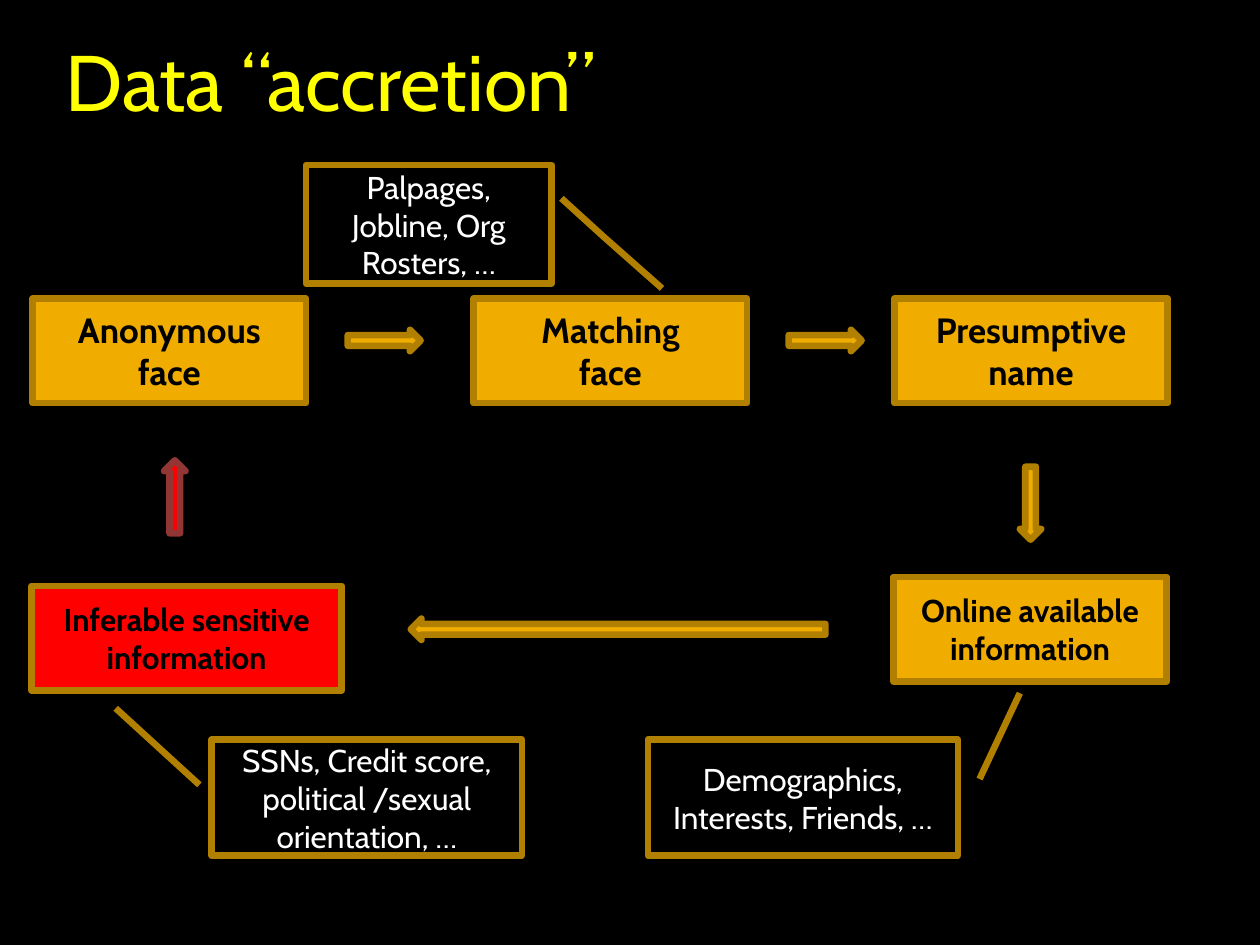
from pptx import Presentation
from pptx.dml.color import RGBColor
from pptx.enum.shapes import MSO_SHAPE
from pptx.enum.text import MSO_ANCHOR, PP_ALIGN
from pptx.util import Cm, Pt

RECT, ARROW = MSO_SHAPE.RECTANGLE, MSO_SHAPE.RIGHT_ARROW
CALL1, CALL2 = MSO_SHAPE.LINE_CALLOUT_1, MSO_SHAPE.LINE_CALLOUT_2
MIDDLE, CENTER = MSO_ANCHOR.MIDDLE, PP_ALIGN.CENTER

FONT = "Cabin"
GOLD, BROWN, RED, MAROON = "F0AD00", "B28000", "FF0000", "923535"
BLACK, WHITE, YELLOW = "000000", "FFFFFF", "FFFF00"
BOX_W, WIDE_W, BOX_H = 5.51, 6.25, 2.11
ARROW_W, ARROW_H = 1.47, 0.43
TOP = 6.02

TITLE = "Data “accretion”"

# Steps: text, left, top, width, size, fill
STEPS = [
    ("Anonymous face", 0.66, TOP, BOX_W, 20, GOLD),
    ("Matching\nface", 9.55, TOP, BOX_W, 20, GOLD),
    ("Presumptive name", 18.03, TOP, BOX_W, 20, GOLD),
    ("Online available information", 18.01, 11.63, BOX_W, 18, GOLD),
    ("Inferable sensitive information", 0.64, 11.81, WIDE_W, 18, RED),
]

# Arrows: left, top, length, turn, fill, line
ARROWS = [
    (7.01, 6.65, ARROW_W, 0, GOLD, BROWN),
    (15.9, 6.65, ARROW_W, 0, GOLD, BROWN),
    (20.04, 9.93, ARROW_W, 90, GOLD, BROWN),
    (8.28, 12.47, 8.36, 180, GOLD, BROWN),
    (2.79, 9.8, ARROW_W, 270, RED, MAROON),
]

# Callouts: text, kind, place, leader points as (y, x) shares of the box
NOTES = [
    ("Palpages, Jobline, Org Rosters, …", CALL2, (6.17, 3.33, 4.95, 2.39),
     (0.28, 1.04, 0.6, 1.21, 1.04, 1.45)),
    ("Demographics, Interests, Friends, …", CALL1,
     (13.06, 14.91, WIDE_W, 2.34), (0.34, 1.07, -0.4, 1.2)),
    ("SSNs, Credit score, political /sexual orientation, …", CALL1,
     (4.27, 14.91, WIDE_W, 2.34), (0.39, -0.04, -0.27, -0.31)),
]


def color(code):
    return RGBColor.from_string(code)


def write(shape, text, size, ink, bold=False, align=None):
    frame = shape.text_frame
    frame.word_wrap = True
    frame.vertical_anchor = MIDDLE
    frame.text = text
    for par in frame.paragraphs:
        par.alignment = align
        font = par.font
        font.name, font.size, font.bold = FONT, Pt(size), bold
        font.color.rgb = color(ink)
    return frame


def draw(kind, place, fill=None, line=BROWN):
    shape = slide.shapes.add_shape(kind, *map(Cm, place))
    shape.shadow.inherit = False
    if fill:
        shape.fill.solid()
        shape.fill.fore_color.rgb = color(fill)
    else:
        shape.fill.background()
    shape.line.color.rgb = color(line)
    shape.line.width = Pt(3.78)
    return shape


deck = Presentation()
deck.slide_width, deck.slide_height = Cm(25.4), Cm(19.05)
slide = deck.slides.add_slide(deck.slide_layouts[6])
slide.background.fill.solid()
slide.background.fill.fore_color.rgb = color(BLACK)

# Title
head = slide.shapes.add_textbox(Cm(1.07), Cm(-0.08), Cm(23.06), Cm(3.38))
frame = write(head, TITLE, 45, YELLOW)
frame.margin_right = Cm(0.13)

# Cycle of steps
for text, left, top, width, size, fill in STEPS:
    box = draw(RECT, (left, top, width, BOX_H), fill)
    write(box, text, size, BLACK, True, CENTER)

for left, top, length, turn, fill, line in ARROWS:
    draw(ARROW, (left, top, length, ARROW_H), fill, line).rotation = turn

# Callouts with examples
for text, kind, place, points in NOTES:
    note = draw(kind, place)
    for i, share in enumerate(points):
        note.adjustments[i] = share
    write(note, text, 18, WHITE, align=CENTER)

deck.save("out.pptx")
